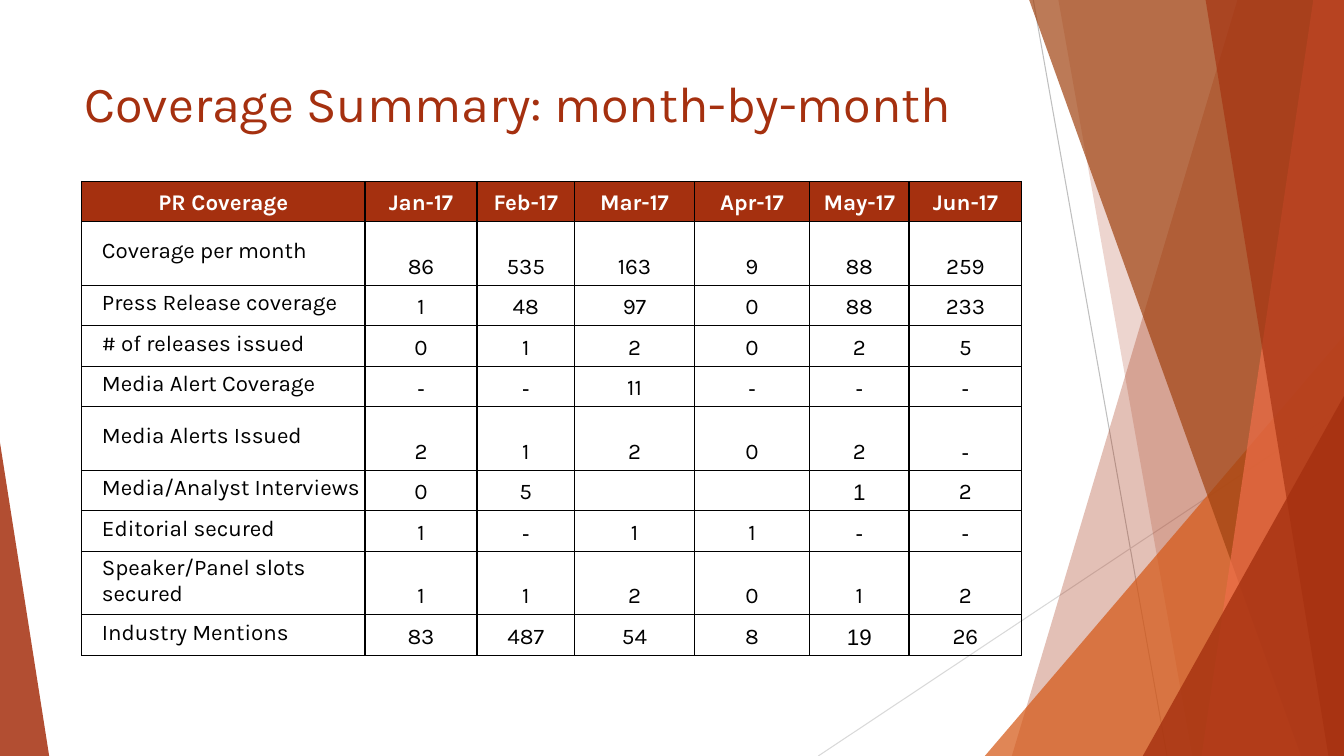
import dataclasses
import typing

import pptx
import pptx.dml.color
import pptx.enum.shapes
import pptx.enum.text
import pptx.oxml
import pptx.oxml.ns
import pptx.util
from pptx.util import Cm

HUES = {
    "rust": "A5300F", "orange": "D55816", "brown": "A04210", "coral": "EE6E4A",
    "black": "000000", "white": "FFFFFF", "gray": "BFBFBF", "pale": "D9D9D9",
}
WIDE, HIGH, TOP = 33.87, 19.05, -0.02
FONT, PLAIN = "Karla", "Arial"


@dataclasses.dataclass
class Line:
    start: tuple[float, float]
    end: tuple[float, float]
    hue: str


@dataclasses.dataclass
class Band:
    """Strip from a slanted left edge to the right side of the slide."""
    upper: float
    lower: float
    hue: str
    alpha: int


@dataclasses.dataclass
class Wedge:
    """Triangle standing on the bottom of the slide."""
    left: float
    top: float
    width: float
    apex: int
    hue: str
    alpha: int


LINES = [
    Line((26.04, 0), (29.41, HIGH), "gray"),
    Line((WIDE, 10.24), (20.62, HIGH), "pale"),
]
FACETS = [
    Band(31.19, 25.5, "rust", 30),
    Band(26.67, 30.05, "rust", 20),
    Wedge(24.82, 8.46, 9.05, 1, "orange", 72),
    Band(25.93, 32.79, "brown", 70),
    Band(33.1, 30.28, "coral", 70),
    Band(30.38, 33.48, "rust", 65),
    Wedge(28.8, 9.98, 5.07, 1, "rust", 80),
    Wedge(0, 11.15, 1.24, 0, "rust", 85),
]

COLS = [7.14, 2.82, 2.46, 3.02, 2.9, 2.51, 2.84]
LOW, TALL = 1.02, 1.6
TALLS = {1, 5, 8}
ROWS = [
    ["PR Coverage", "Jan-17", "Feb-17", "Mar-17", "Apr-17", "May-17", "Jun-17"],
    ["Coverage per month", "86", "535", "163", "9", "88", "259"],
    ["Press Release coverage", "1", "48", "97", "0", "88", "233"],
    ["# of releases issued", "0", "1", "2", "0", "2", "5"],
    ["Media Alert Coverage", "-", "-", "11", "-", "-", "-"],
    ["Media Alerts Issued", "2", "1", "2", "0", "2", "-"],
    ["Media/Analyst Interviews", "0", "5", "", "", "1", "2"],
    ["Editorial secured", "1", "-", "1", "1", "-", "-"],
    ["Speaker/Panel slots secured", "1", "1", "2", "0", "1", "2"],
    ["Industry Mentions", "83", "487", "54", "8", "19", "26"],
]
ODD = {(6, 5), (9, 5)}  # numbers set in the plain font, like the dashes


def color(hue: str) -> pptx.dml.color.RGBColor:
    return pptx.dml.color.RGBColor.from_string(HUES[hue])


def element(xml: str) -> typing.Any:
    return pptx.oxml.parse_xml(xml.replace(">", f" {pptx.oxml.ns.nsdecls('a')}>", 1))


def write(para: typing.Any, text: str, size: int, hue: str,
          face: str = FONT, bold: bool = False) -> None:
    run = para.add_run()
    run.text = text
    run.font.name, run.font.size = face, pptx.util.Pt(size)
    run.font.bold = bold
    run.font.color.rgb = color(hue)


def paint(shape: typing.Any, hue: str, alpha: int) -> None:
    shape.shadow.inherit = False
    shape.line.fill.background()
    shape.fill.solid()
    shape.fill.fore_color.rgb = color(hue)
    tint = next(shape.fill._xPr.iter(pptx.oxml.ns.qn("a:srgbClr")))
    tint.append(element(f'<a:alpha val="{alpha * 1000}"></a:alpha>'))


def draw_line(shapes: typing.Any, line: Line) -> None:
    ends = [Cm(x) for x in line.start + line.end]
    link = shapes.add_connector(pptx.enum.shapes.MSO_CONNECTOR.STRAIGHT, *ends)
    link.line.color.rgb = color(line.hue)
    link.line.width = pptx.util.Pt(0.75)
    link._element.spPr.append(element("<a:effectLst></a:effectLst>"))


def draw_band(shapes: typing.Any, band: Band) -> None:
    path = shapes.build_freeform(Cm(band.upper), Cm(TOP))
    rest = [(WIDE, TOP), (WIDE, HIGH), (band.lower, HIGH)]
    path.add_line_segments([(Cm(x), Cm(y)) for x, y in rest], close=True)
    paint(path.convert_to_shape(), band.hue, band.alpha)


def draw_wedge(shapes: typing.Any, wedge: Wedge) -> None:
    kind = pptx.enum.shapes.MSO_SHAPE.ISOSCELES_TRIANGLE
    shape = shapes.add_shape(kind, Cm(wedge.left), Cm(wedge.top),
                             Cm(wedge.width), Cm(HIGH - wedge.top))
    shape.adjustments[0] = wedge.apex
    paint(shape, wedge.hue, wedge.alpha)


def frame(cell: typing.Any) -> None:
    props = cell._tc.get_or_add_tcPr()
    for spot, side in enumerate("LRTB"):
        props.insert(spot, element(
            f'<a:ln{side} w="12700"><a:solidFill><a:srgbClr val="{HUES["black"]}"/>'
            f"</a:solidFill></a:ln{side}>"))


def fill_cell(cell: typing.Any, text: str, row: int, col: int) -> None:
    head, label = row == 0, row > 0 and col == 0
    if head:
        cell.fill.solid()
        cell.fill.fore_color.rgb = color("rust")
    else:
        cell.fill.background()
    frame(cell)
    cell.margin_left = Cm(0.51 if label else 0.03)
    cell.margin_right = cell.margin_top = Cm(0.03)
    cell.margin_bottom = Cm(0.13)
    anchor = pptx.enum.text.MSO_ANCHOR
    cell.vertical_anchor = anchor.MIDDLE if label else anchor.BOTTOM
    para = cell.text_frame.paragraphs[0]
    align = pptx.enum.text.PP_ALIGN
    para.alignment = align.LEFT if label else align.CENTER
    if text:
        face = PLAIN if text == "-" or (row, col) in ODD else FONT
        write(para, text, 16, "white" if head else "black", face, head)


def draw_table(shapes: typing.Any) -> None:
    highs = [TALL if row in TALLS else LOW for row in range(len(ROWS))]
    table = shapes.add_table(len(ROWS), len(COLS), Cm(2.06), Cm(4.57),
                             Cm(sum(COLS)), Cm(sum(highs))).table
    table.first_row = table.horz_banding = False
    for col, width in zip(table.columns, COLS):
        col.width = Cm(width)
    for row, high in zip(table.rows, highs):
        row.height = Cm(high)
    for row, texts in enumerate(ROWS):
        for col, text in enumerate(texts):
            fill_cell(table.cell(row, col), text, row, col)


def draw_title(shapes: typing.Any) -> None:
    box = shapes.add_textbox(Cm(1.88), Cm(1.7), Cm(25.32), Cm(3.66))
    box.text_frame.word_wrap = True
    para = box.text_frame.paragraphs[0]
    para.space_before = pptx.util.Pt(8)
    write(para, "Coverage Summary: month-by-month", 36, "rust")


def main() -> None:
    deck = pptx.Presentation()
    deck.slide_width, deck.slide_height = Cm(WIDE), Cm(HIGH)
    shapes = deck.slides.add_slide(deck.slide_layouts[6]).shapes
    # Backdrop of thin lines and facets
    for line in LINES:
        draw_line(shapes, line)
    for facet in FACETS:
        if isinstance(facet, Band):
            draw_band(shapes, facet)
        else:
            draw_wedge(shapes, facet)
    # Content
    draw_table(shapes)
    draw_title(shapes)
    deck.save("out.pptx")


if __name__ == "__main__":
    main()
